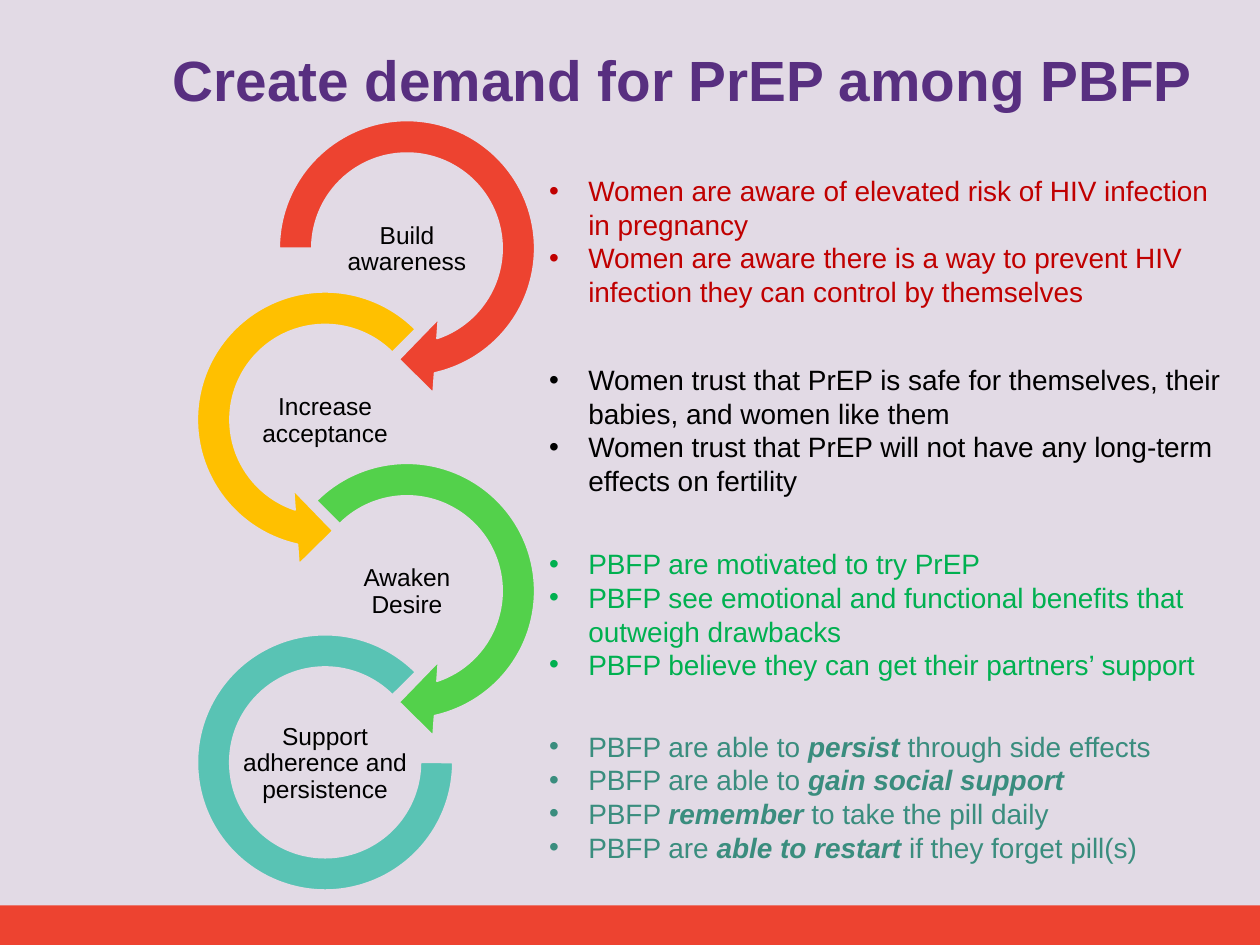
from dataclasses import dataclass

from lxml import etree
from pptx import Presentation
from pptx.dml.color import RGBColor
from pptx.enum.shapes import MSO_SHAPE
from pptx.enum.text import MSO_ANCHOR, PP_ALIGN
from pptx.oxml.ns import qn
from pptx.util import Cm, Pt

RECTANGLE = MSO_SHAPE.RECTANGLE
RIGHT_TURN = MSO_SHAPE.CIRCULAR_ARROW
LEFT_TURN = MSO_SHAPE.LEFT_CIRCULAR_ARROW
ARC = MSO_SHAPE.BLOCK_ARC
TOP, MIDDLE, BOTTOM = MSO_ANCHOR.TOP, MSO_ANCHOR.MIDDLE, MSO_ANCHOR.BOTTOM
CENTER = PP_ALIGN.CENTER


@dataclass(frozen=True)
class Theme:
    font: str = "Arial"
    background: str = "E2DAE5"
    title: str = "582F80"
    band: str = "ED4330"
    label: str = "000000"
    title_size: float = 32.4
    label_size: float = 14
    bullet_size: float = 16


@dataclass(frozen=True)
class Area:
    """A rectangle on the slide, in centimetres."""
    left: float
    top: float
    width: float
    height: float

    def lengths(self) -> tuple:
        return Cm(self.left), Cm(self.top), Cm(self.width), Cm(self.height)


@dataclass(frozen=True)
class Stage:
    """One step; in each bullet, every second piece of text is emphasised."""
    label: str
    outline: MSO_SHAPE
    adjustments: tuple
    fill: str
    text_color: str
    text_top: float
    bullets: tuple
    text_width: float = 14.25
    inset: float = 0


THEME = Theme()
RING_SIZE, RING_TOP, RING_PITCH = 5.99, 2.01, 3.455
RING_LEFTS = (5.21, 3.56)
LABEL_OFFSET = (1.32, 2.18)
LABEL_SIZE = (3.35, 1.68)
BULLET_LEFT, BULLET_HEIGHT, BULLET_INDENT = 10.82, 3.0, 0.79

STAGES = (
    Stage("Build awareness", RIGHT_TURN, (0.11, 11.42, 45, 108, 0.125),
          "ED4330", "C00000", 3.38, (
              ("Women are aware of elevated risk of HIV infection in pregnancy",),
              ("Women are aware there is a way to prevent HIV infection "
               "they can control by themselves",),
          )),
    Stage("Increase acceptance", LEFT_TURN, (0.11, 11.42, 63, 189, 0.125),
          "FFC000", "000000", 7.19, (
              ("Women trust that PrEP is safe for themselves, their babies, "
               "and women like them",),
              ("Women trust that PrEP will not have any long-term effects "
               "on fertility",),
          )),
    Stage("Awaken Desire", RIGHT_TURN, (0.11, 11.42, 45, 135, 0.125),
          "53D14B", "00B050", 10.9, (
              ("PBFP are motivated to try PrEP",),
              ("PBFP see emotional and functional benefits that "
               "outweigh drawbacks",),
              ("PBFP believe they can get their partners’ support",),
          ), text_width=14.58),
    Stage("Support adherence and persistence", ARC, (0, 189, 0.127),
          "59C3B4", "3A8D7E", 14.58, (
              ("PBFP are able to ", "persist", " through side effects"),
              ("PBFP are able to ", "gain social support"),
              ("PBFP ", "remember", " to take the pill daily"),
              ("PBFP are ", "able to restart ", "if they forget pill(s)"),
          ), inset=0.42),
)


def add_text_box(shapes, area: Area, anchor, margin: float | None = None):
    box = shapes.add_textbox(*area.lengths())
    frame = box.text_frame
    frame.word_wrap = True
    frame.vertical_anchor = anchor
    if margin is not None:
        frame.margin_left = frame.margin_right = Cm(margin)
        frame.margin_top = frame.margin_bottom = Cm(margin)
    return frame


def add_span(para, text: str, size: float, color: str,
             bold: bool = False, italic: bool = False) -> None:
    span = para.add_run()
    span.text = text
    font = span.font
    font.name, font.size = THEME.font, Pt(size)
    font.bold, font.italic = bold, italic
    font.color.rgb = RGBColor.from_string(color)


def add_filled_shape(shapes, outline, area: Area, fill: str):
    shape = shapes.add_shape(outline, *area.lengths())
    shape.shadow.inherit = False
    shape.fill.solid()
    shape.fill.fore_color.rgb = RGBColor.from_string(fill)
    shape.line.fill.background()
    return shape


def set_bullet(para) -> None:
    properties = para._p.get_or_add_pPr()
    properties.set("marL", str(Cm(BULLET_INDENT)))
    properties.set("indent", str(-Cm(BULLET_INDENT)))
    etree.SubElement(properties, qn("a:buFont")).set("typeface", THEME.font)
    etree.SubElement(properties, qn("a:buChar")).set("char", "•")


def add_title(shapes, text: str) -> None:
    para = add_text_box(shapes, Area(3.23, 0.2, 22.33, 2.21), BOTTOM).paragraphs[0]
    para.line_spacing = 0.9
    add_span(para, text, THEME.title_size, THEME.title, bold=True)


def add_ring(shapes, stage: Stage, index: int) -> None:
    """Draw the stage's ring, alternating right and left, with its label."""
    left = RING_LEFTS[index % 2]
    top = RING_TOP + index * RING_PITCH
    size = RING_SIZE - 2 * stage.inset
    ring = add_filled_shape(
        shapes, stage.outline,
        Area(left + stage.inset, top + stage.inset, size, size), stage.fill)
    for position, value in enumerate(stage.adjustments):
        ring.adjustments[position] = value
    ring.line.color.rgb = RGBColor.from_string(THEME.background)
    ring.line.width = Pt(1)

    label_area = Area(left + LABEL_OFFSET[0], top + LABEL_OFFSET[1], *LABEL_SIZE)
    para = add_text_box(shapes, label_area, MIDDLE, margin=0.02).paragraphs[0]
    para.alignment = CENTER
    para.line_spacing = 0.9
    add_span(para, stage.label, THEME.label_size, THEME.label)


def add_bullets(shapes, stage: Stage) -> None:
    area = Area(BULLET_LEFT, stage.text_top, stage.text_width, BULLET_HEIGHT)
    frame = add_text_box(shapes, area, TOP)
    for index, pieces in enumerate(stage.bullets):
        para = frame.add_paragraph() if index else frame.paragraphs[0]
        set_bullet(para)
        for position, text in enumerate(pieces):
            strong = position % 2 == 1
            add_span(para, text, THEME.bullet_size, stage.text_color, strong, strong)


def main() -> None:
    deck = Presentation()
    deck.slide_width, deck.slide_height = Cm(25.4), Cm(19.05)
    page = deck.slides.add_slide(deck.slide_layouts[6])
    page.background.fill.solid()
    page.background.fill.fore_color.rgb = RGBColor.from_string(THEME.background)

    add_filled_shape(page.shapes, RECTANGLE, Area(0, 18.25, 25.4, 0.8), THEME.band)
    add_title(page.shapes, "Create demand for PrEP among PBFP")
    rings = page.shapes.add_group_shape()
    for index, stage in enumerate(STAGES):
        add_ring(rings.shapes, stage, index)
        add_bullets(page.shapes, stage)
    deck.save("out.pptx")


if __name__ == "__main__":
    main()
